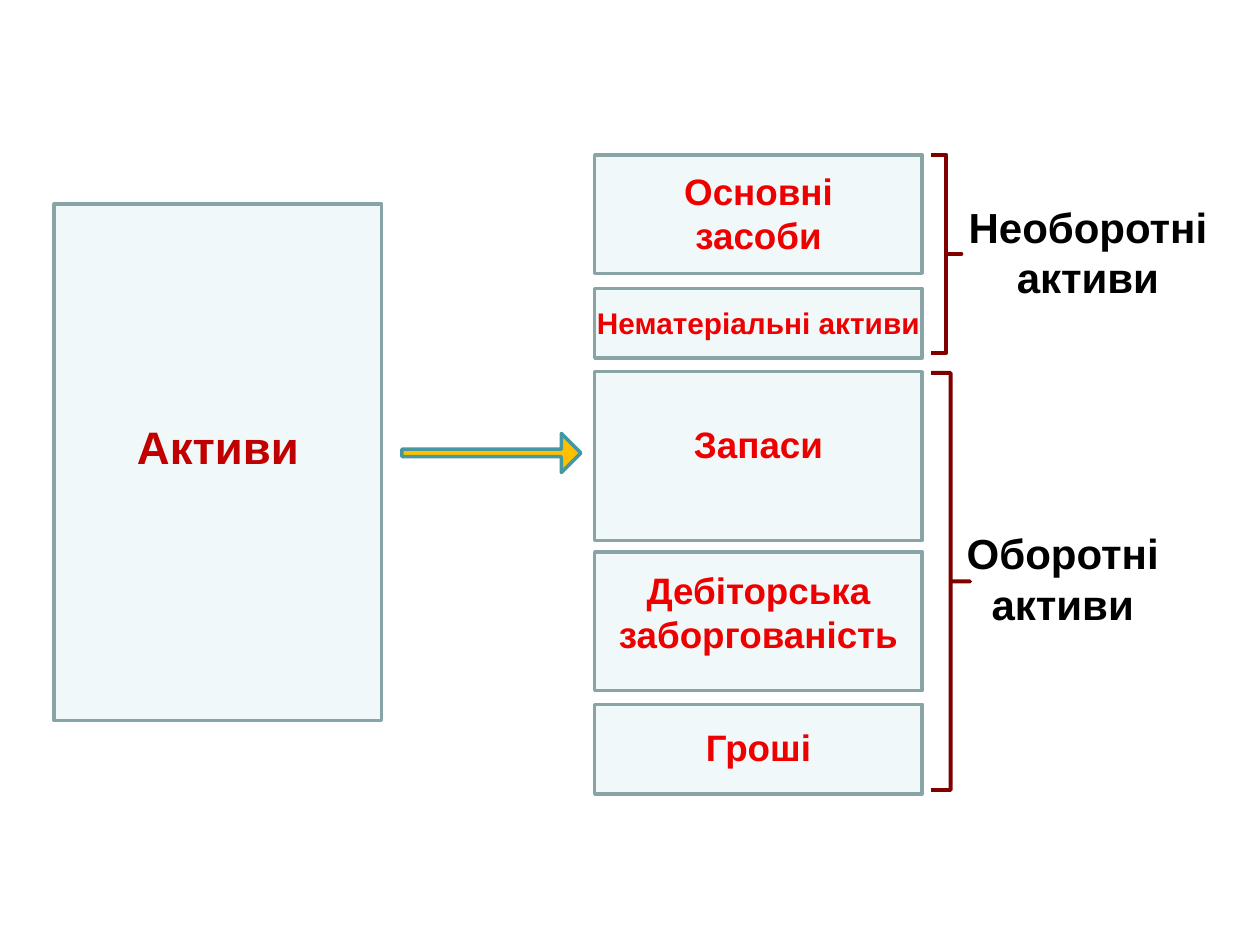
from pptx import Presentation
from pptx.dml.color import RGBColor
from pptx.enum.shapes import MSO_SHAPE
from pptx.enum.text import MSO_AUTO_SIZE, PP_ALIGN
from pptx.util import Inches, Pt

PALE = RGBColor(0xF1, 0xF8, 0xF9)
GREY = RGBColor(0x89, 0xA4, 0xA7)
AMBER = RGBColor(0xFF, 0xC0, 0x00)
TEAL = RGBColor(0x45, 0x97, 0xA0)
MAROON = RGBColor(0x80, 0x00, 0x00)
DARK_RED = RGBColor(0xC0, 0x00, 0x00)
RED = RGBColor(0xEE, 0x00, 0x00)
BLACK = RGBColor(0x00, 0x00, 0x00)

BOX_WIDTH = 2.6
TOTAL_LEFT = 0.43
ITEM_LEFT = 4.72
BRACE_LEFT = 7.39
GROUP_LEFT = 7.55

TOTAL = ("Активи", 1.62, 4.1, 3.28, 0.53, 2.12, 26)
ITEMS = [
    ("Основні засоби", 1.23, 0.94, 1.29, 0.8, 2.12, 21),
    ("Нематеріальні активи", 2.29, 0.55, 2.37, 0.38, 3.47, 17),
    ("Запаси", 2.95, 1.34, 3.3, 0.45, 2.12, 21),
    ("Дебіторська заборгованість", 4.38, 1.1, 4.46, 0.8, BOX_WIDTH, 21),
    ("Гроші", 5.59, 0.71, 5.7, 0.45, BOX_WIDTH, 21),
]
GROUPS = [
    ("Необоротні активи", 1.55, 2.17, 1.23, 0.24, 1.57),
    ("Оборотні активи", 4.14, 1.77, 2.96, 0.31, 3.31),
]


def add_figure(slide, kind, place, fill, outline, weight, adjustments=()):
    figure = slide.shapes.add_shape(kind, *map(Inches, place))
    figure.shadow.inherit = False
    if fill is None:
        figure.fill.background()
    else:
        figure.fill.solid()
        figure.fill.fore_color.rgb = fill
    figure.line.color.rgb = outline
    figure.line.width = Pt(weight)
    for index, value in enumerate(adjustments):
        figure.adjustments[index] = value


def add_label(slide, wording, place, size, color):
    frame = slide.shapes.add_textbox(*map(Inches, place)).text_frame
    frame.word_wrap = True
    frame.auto_size = MSO_AUTO_SIZE.SHAPE_TO_FIT_TEXT
    paragraph = frame.paragraphs[0]
    paragraph.alignment = PP_ALIGN.CENTER
    run = paragraph.add_run()
    run.text = wording
    run.font.name = "Arial"
    run.font.size = Pt(size)
    run.font.bold = True
    run.font.color.rgb = color


def add_asset(slide, left, asset, color):
    wording, top, height, label_top, label_height, label_width, size = asset
    add_figure(slide, MSO_SHAPE.RECTANGLE, (left, top, BOX_WIDTH, height), PALE, GREY, 2)
    label_left = left + (BOX_WIDTH - label_width) / 2
    add_label(slide, wording, (label_left, label_top, label_width, label_height), size, color)


def main():
    deck = Presentation()
    deck.slide_width, deck.slide_height = Inches(10), Inches(7.5)
    slide = deck.slides.add_slide(deck.slide_layouts[6])

    add_asset(slide, TOTAL_LEFT, TOTAL, DARK_RED)
    add_figure(slide, MSO_SHAPE.RIGHT_ARROW, (3.19, 3.44, 1.42, 0.31), AMBER, TEAL, 2, (0.19, 0.5))
    for item in ITEMS:
        add_asset(slide, ITEM_LEFT, item, RED)
    for wording, top, width, brace_top, brace_width, brace_height in GROUPS:
        add_label(slide, wording, (GROUP_LEFT, top, width, 0.9), 24, BLACK)
        add_figure(slide, MSO_SHAPE.RIGHT_BRACE, (BRACE_LEFT, brace_top, brace_width, brace_height),
                   None, MAROON, 2.25, (0, 0.5))

    deck.save("out.pptx")


if __name__ == "__main__":
    main()
